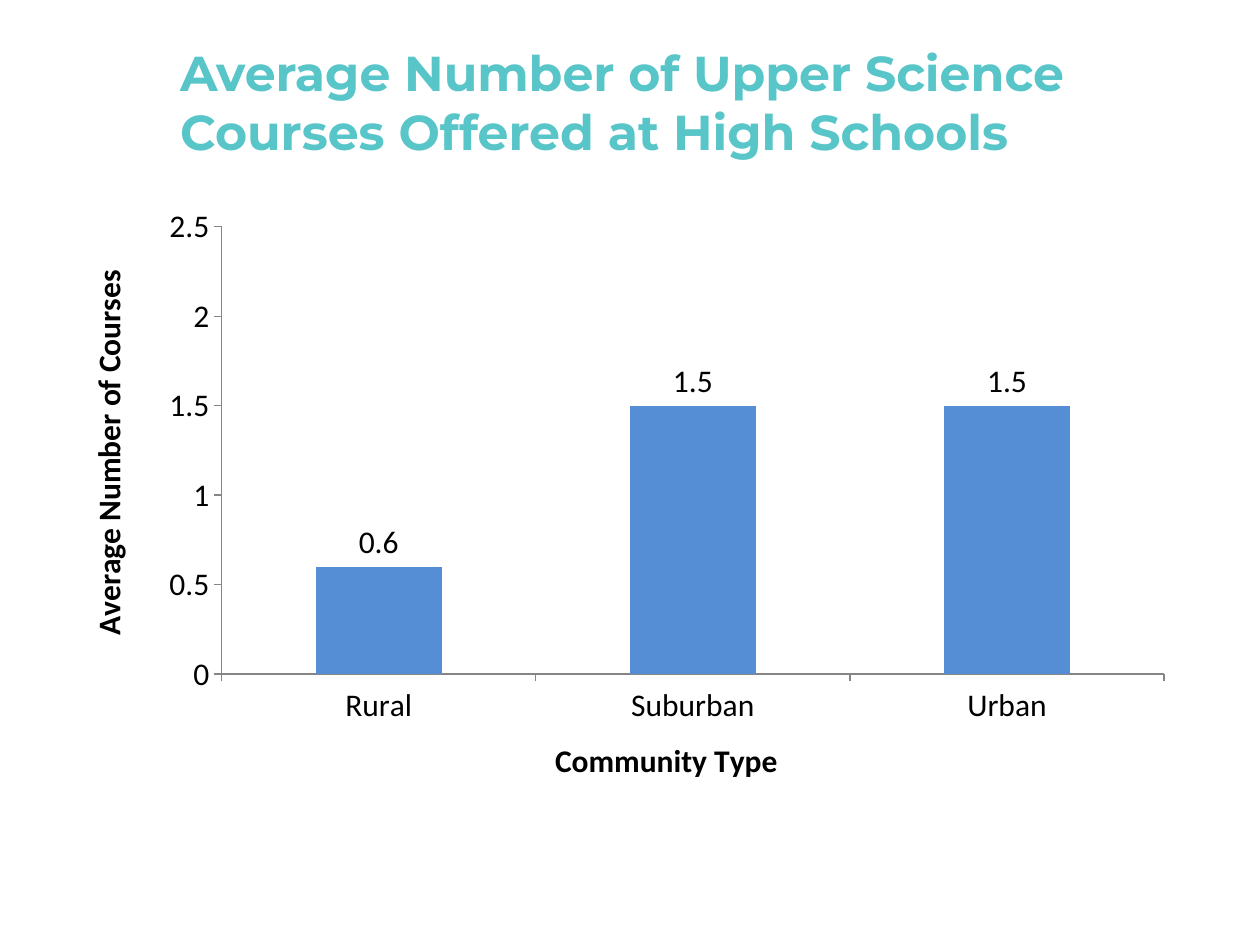
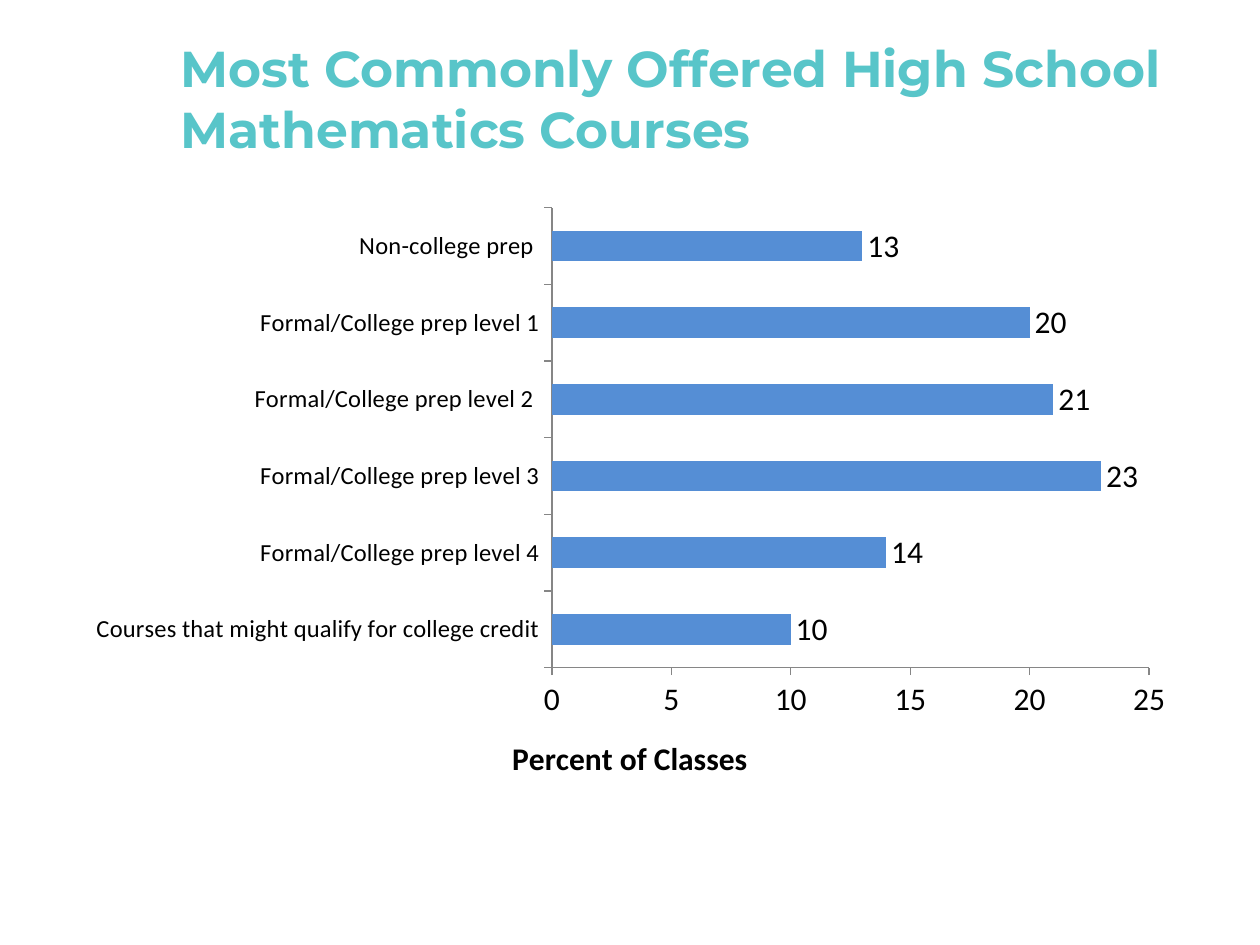
from dataclasses import dataclass

from pptx import Presentation
from pptx.chart.data import CategoryChartData
from pptx.dml.color import RGBColor
from pptx.enum.chart import XL_CHART_TYPE, XL_LABEL_POSITION, XL_TICK_MARK
from pptx.enum.text import MSO_ANCHOR, MSO_AUTO_SIZE, PP_ALIGN
from pptx.oxml import parse_xml
from pptx.util import Inches, Pt


@dataclass(frozen=True)
class Theme:
    teal: str = "58C5C9"
    blue: str = "558ED5"
    black: str = "000000"
    gray: str = "868686"
    head: str = "Montserrat"
    body: str = "Calibri"
    label: float = 18
    small: float = 14
    title: float = 28
    large: float = 28.8


THEME = Theme()
CHART_NS = "http://schemas.openxmlformats.org/drawingml/2006/chart"
CHART_BOX = (0.58, 1.55, 8.83, 4.87)


def style(font, size, color=THEME.black, face=THEME.body, bold=False):
    font.size, font.name, font.bold = Pt(size), face, bold
    font.color.rgb = RGBColor.from_string(color)


def write(frame, text, align=None, **look):
    """Put one formatted paragraph in a text frame."""
    para = frame.paragraphs[0]
    para.alignment = align
    run = para.add_run()
    run.text = text
    style(run.font, **look)


def place(part, index, box, spot, inner=False):
    """Lay out a chart part at x, y, w, h inches inside the chart box."""
    for old in part.xpath("c:layout"):
        part.remove(old)
    target = '<c:layoutTarget val="inner"/>' if inner else ""
    modes = '<c:xMode val="edge"/><c:yMode val="edge"/>'
    wide, high = box[2:]
    sizes = "".join(f'<c:{key} val="{val / full:.4f}"/>' for key, val, full
                    in zip("xywh", spot, (wide, high, wide, high)))
    part.insert(index, parse_xml(
        f'<c:layout xmlns:c="{CHART_NS}"><c:manualLayout>'
        f"{target}{modes}{sizes}</c:manualLayout></c:layout>"))


def add_title(slide, text, top, size):
    title = slide.shapes.title
    box = (1.33, top, 8.17, 0.95)
    title.left, title.top, title.width, title.height = map(Inches, box)
    frame = title.text_frame
    frame.word_wrap, frame.auto_size = True, MSO_AUTO_SIZE.NONE
    frame.vertical_anchor = MSO_ANCHOR.MIDDLE
    write(frame, text, align=PP_ALIGN.LEFT, size=size, color=THEME.teal,
          face=THEME.head, bold=True)


def set_axis(axis, size=THEME.label):
    axis.has_major_gridlines = False
    axis.major_tick_mark = XL_TICK_MARK.OUTSIDE
    axis.minor_tick_mark = XL_TICK_MARK.NONE
    axis.format.line.color.rgb = RGBColor.from_string(THEME.gray)
    axis.format.line.width = Pt(0.75)
    style(axis.tick_labels.font, size)


def name_axis(axis, text, box, spot, turn=False):
    axis.has_title = True
    title = axis.axis_title
    frame = title.text_frame
    write(frame, text, size=THEME.label, bold=True)
    if turn:
        body = frame._txBody.bodyPr
        body.set("rot", "-5400000")
        body.set("vert", "horz")
    place(title._element, 1, box, spot)


def add_bars(slide, kind, rows, box, plot, top, step, size=THEME.label):
    data = CategoryChartData(number_format="General")
    data.categories = [name for name, _ in rows]
    data.add_series("Series 1", [val for _, val in rows])
    chart = slide.shapes.add_chart(kind, *map(Inches, box), data).chart
    chart.has_legend = chart.has_title = False
    style(chart.font, THEME.label)

    # Bars and their values
    bars = chart.plots[0]
    bars.gap_width, bars.vary_by_categories = 150, False
    fill = bars.series[0].format.fill
    fill.solid()
    fill.fore_color.rgb = RGBColor.from_string(THEME.blue)
    bars.has_data_labels = True
    labels = bars.data_labels
    labels.show_value = True
    labels.position = XL_LABEL_POSITION.OUTSIDE_END
    style(labels.font, THEME.label)

    # Axes and plot area
    set_axis(chart.category_axis, size)
    scale = chart.value_axis
    set_axis(scale)
    scale.minimum_scale, scale.maximum_scale = 0, top
    scale.major_unit = step
    area = chart._chartSpace.xpath("c:chart/c:plotArea")[0]
    place(area, 0, box, plot, inner=True)
    return chart


def science(slide, box):
    add_title(slide,
              "Average Number of Upper Science Courses Offered at High Schools",
              0.33, THEME.title)
    rows = [("Rural", 0.6), ("Suburban", 1.5), ("Urban", 1.5)]
    chart = add_bars(slide, XL_CHART_TYPE.COLUMN_CLUSTERED, rows, box,
                     (1.18, 0.25, 7.48, 3.55), 2.5, 0.5)
    name_axis(chart.category_axis, "Community Type", box, (3.78, 4.27))
    name_axis(chart.value_axis, "Average Number of Courses", box,
              (0.06, 0.55), turn=True)


def maths(slide, box):
    add_title(slide, "Most Commonly Offered High School Mathematics Courses",
              0.3, THEME.large)
    prep = "Formal/College prep level "
    rows = [("Courses that might qualify for college credit", 10),
            (prep + "4", 14), (prep + "3", 23), (prep + "2 ", 21),
            (prep + "1", 20), ("Non-college prep ", 13)]
    chart = add_bars(slide, XL_CHART_TYPE.BAR_CLUSTERED, rows, box,
                     (3.8, 0.1, 4.74, 3.65), 25, 5, size=THEME.small)
    name_axis(chart.value_axis, "Percent of Classes", box, (3.44, 4.25))


def main():
    deck = Presentation()
    deck.slide_width, deck.slide_height = Inches(10), Inches(7.5)
    for build in (science, maths):
        build(deck.slides.add_slide(deck.slide_layouts[5]), CHART_BOX)
    deck.save("out.pptx")


if __name__ == "__main__":
    main()
